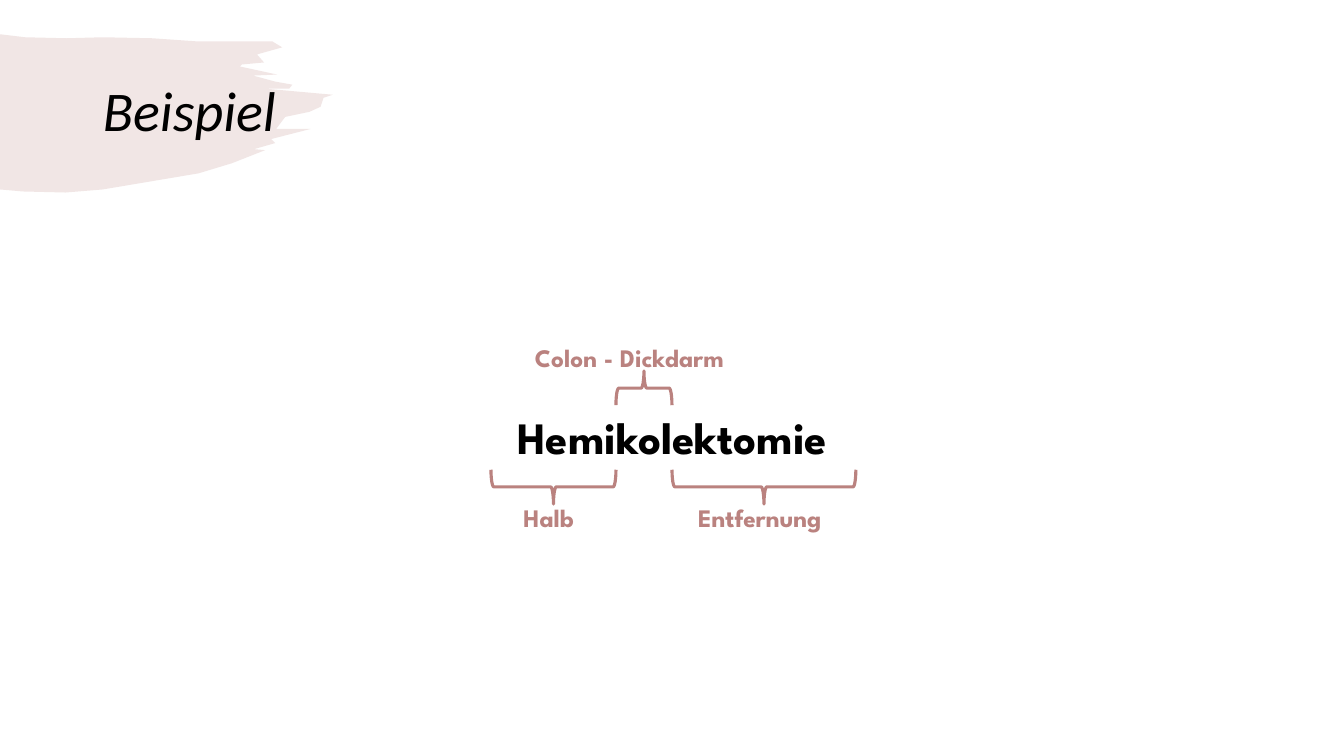
from lxml import etree
from pptx import Presentation
from pptx.dml.color import RGBColor
from pptx.enum.shapes import MSO_SHAPE as SHAPE
from pptx.enum.text import MSO_ANCHOR as ANCHOR, MSO_AUTO_SIZE as AUTO, PP_ALIGN as ALIGN
from pptx.oxml.ns import qn
from pptx.util import Inches, Pt

WIDTH, HEIGHT = Inches(13.333), Inches(7.5)
COL, ROW = WIDTH / 100, HEIGHT / 100  # grid of 100 columns by 100 rows
COLORS = {"rose": "BA827F", "black": "000000"}
HEADING_FONT, WORD_FONT = "Calibri", "League Spartan"
MARGIN, CONTENT_WIDTH = 6.9, 86.25
BRACE_DEPTH = 4.53
ABOVE, BELOW = (51.33, 44.67, 270), (64.4, 65.73, 90)  # brace row, label row, rotation

# label, its columns, first and last column of the word part, side
WORD_PARTS = [
    ("Halb", 5.93, 36.53, 45.83, BELOW),
    ("Colon - Dickdarm", 17.7, 45.83, 50, ABOVE),
    ("Entfernung", 11.25, 50, 63.68, BELOW),
]

# Brush stroke in hundredths of an inch, clockwise from the slide's edge
BRUSH_OUTLINE = [
    (0, 34), (25, 37), (66, 38), (102, 37), (151, 38), (194, 41), (248, 41), (270, 41),
    (280, 47), (255, 54), (262, 62), (240, 64), (238, 66), (275, 74), (251, 75), (273, 81),
    (290, 84), (287, 88), (263, 88), (330, 94), (321, 97), (318, 106), (307, 111), (283, 116),
    (274, 128), (308, 128), (269, 138), (273, 142), (252, 148), (263, 149), (230, 162),
    (197, 172), (102, 188), (65, 191), (23, 190), (0, 188),
]


def rgb(name):
    return RGBColor.from_string(COLORS[name])


def grid_box(left, top, width, height):
    return int(left * COL), int(top * ROW), int(width * COL), int(height * ROW)


def format_run(p, size, font, color, bold=False, italic=False):
    f = p.runs[0].font
    f.size, f.name, f.bold, f.italic = Pt(size), font, bold, italic
    f.color.rgb = rgb(color)


def add_brush_stroke(slide):
    """Draw the translucent stroke behind everything else."""
    builder = slide.shapes.build_freeform(*BRUSH_OUTLINE[0], scale=Inches(0.01))
    builder.add_line_segments(BRUSH_OUTLINE[1:], close=True)
    sp = builder.convert_to_shape()
    sp.shadow.inherit = False
    sp.line.fill.background()
    sp.fill.solid()
    sp.fill.fore_color.rgb = rgb("rose")
    color = sp._element.spPr.find(".//" + qn("a:srgbClr"))
    etree.SubElement(color, qn("a:alpha"), val="20000")
    slide.shapes._spTree.insert(2, sp._element)


def set_title(slide, text):
    title = slide.shapes.title
    title.left, title.top, title.width, title.height = grid_box(MARGIN, 5.33, CONTENT_WIDTH, 19.33)
    tf = title.text_frame
    tf.text = text
    tf.vertical_anchor = ANCHOR.MIDDLE
    p = tf.paragraphs[0]
    p.alignment, p.line_spacing = ALIGN.LEFT, 0.9
    format_run(p, 40, HEADING_FONT, "black", italic=True)


def add_text(slide, text, box, size, color, align=ALIGN.LEFT):
    tf = slide.shapes.add_textbox(*grid_box(*box)).text_frame
    tf.word_wrap, tf.auto_size = True, AUTO.NONE
    tf.vertical_anchor = ANCHOR.MIDDLE
    tf.text = text
    p = tf.paragraphs[0]
    p.alignment = align
    format_run(p, size, WORD_FONT, color, bold=True)


def add_brace(slide, first, last, row, rotation):
    """Turn an upright brace so that it spans the columns from first to last."""
    depth, span = int(BRACE_DEPTH * ROW), int((last - first) * COL)
    left = int((first + last) / 2 * COL - depth / 2)
    top = int(row * ROW - span / 2)
    sp = slide.shapes.add_shape(SHAPE.RIGHT_BRACE, left, top, depth, span)
    sp.rotation = rotation
    sp.shadow.inherit = False
    sp.fill.background()
    sp.line.color.rgb = rgb("rose")
    sp.line.width = Pt(2.25)


def main():
    prs = Presentation()
    prs.slide_width, prs.slide_height = WIDTH, HEIGHT
    slide = prs.slides.add_slide(prs.slide_layouts[5])
    add_brush_stroke(slide)
    set_title(slide, "Beispiel")
    add_text(slide, "Hemikolektomie", (MARGIN, 53.7, CONTENT_WIDTH, 8), 32, "black", ALIGN.CENTER)
    for label, width, first, last, (brace_row, label_row, rotation) in WORD_PARTS:
        add_brace(slide, first, last, brace_row, rotation)
        left = (first + last - width) / 2
        add_text(slide, label, (left, label_row, width, 5.33), 18, "rose")
    prs.save("out.pptx")


if __name__ == "__main__":
    main()
